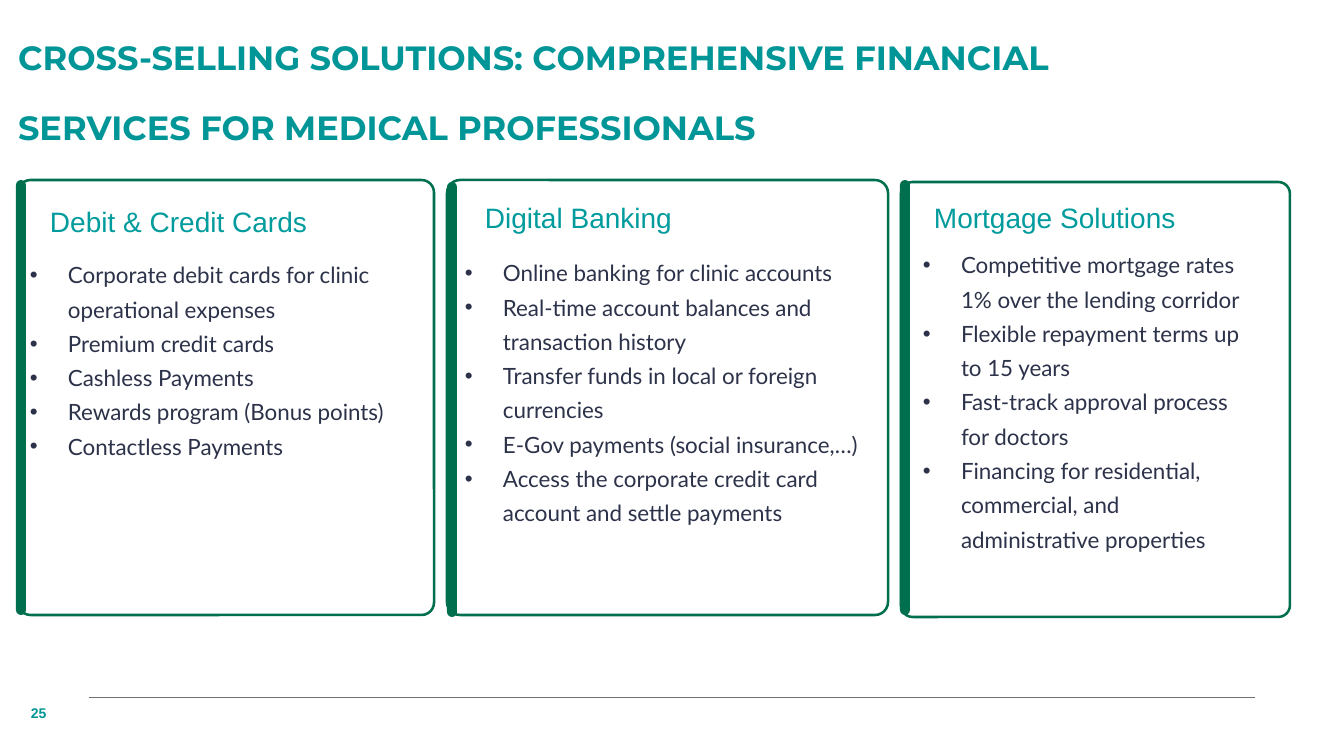
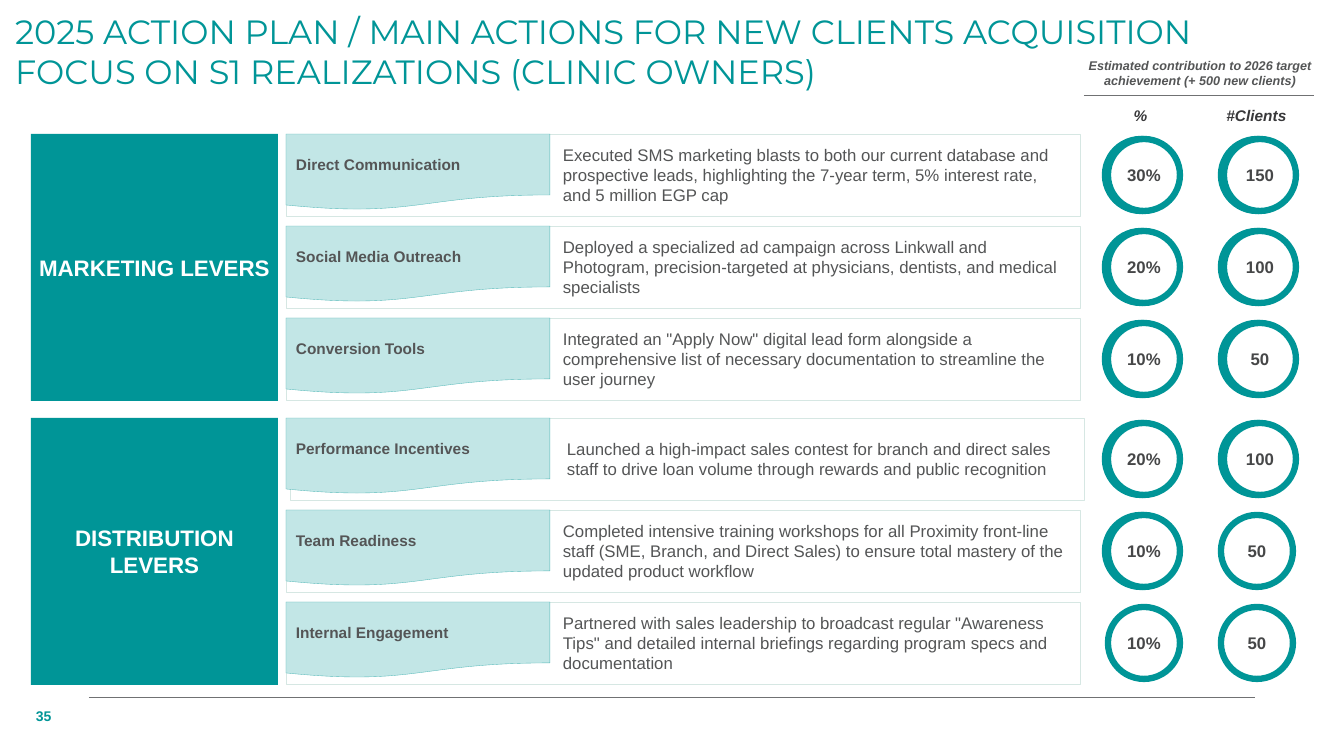
"""Build two slides: cross-selling solutions and the 2025 action plan."""
from lxml import etree
from pptx import Presentation
from pptx import util as u
from pptx.dml.color import RGBColor
from pptx.enum import shapes, text
from pptx.oxml.ns import qn

SCALE = 12192000 / 1344
COLORS = {
    "teal": "009597", "heading": "009B9D", "green": "006F4E", "navy": "2C3249",
    "white": "FFFFFF", "pale": "C2E6E6", "pale_edge": "58BABA", "card_edge": "D6E7E3",
    "rule": "707173", "body": "545556", "caption": "38383A", "figure": "464748",
}
SHAPE = shapes.MSO_SHAPE
MIDDLE = {"vertical_anchor": text.MSO_ANCHOR.MIDDLE}
TOP = {"vertical_anchor": text.MSO_ANCHOR.TOP}
SIDES = ("margin_left", "margin_top", "margin_right", "margin_bottom")
FLUSH = TOP | dict.fromkeys(SIDES, 0)
SNUG = MIDDLE | dict.fromkeys(SIDES, u.Inches(0.04))
LEFT = {"alignment": text.PP_ALIGN.LEFT}
CENTER = {"alignment": text.PP_ALIGN.CENTER}

STYLES = {
    "spaced_title": (FLUSH, LEFT | {"line_spacing": u.Pt(50.5)}, "teal",
                     {"name": "Montserrat", "size": u.Pt(24), "bold": True}),
    "title": (TOP, LEFT, "teal", {"name": "Montserrat", "size": u.Pt(24), "bold": False}),
    "page": (MIDDLE, LEFT, "teal", {"name": "Arial", "size": u.Pt(10), "bold": True}),
    "heading": (FLUSH, LEFT | {"line_spacing": u.Pt(25)}, "heading",
                {"name": "Arial", "size": u.Pt(20)}),
    "bullets": (FLUSH, LEFT | {"line_spacing": u.Pt(24.5)}, "navy",
                {"name": "Lato", "size": u.Pt(16)}),
    "lever": (SNUG, CENTER, "white", {"name": "Arial", "size": u.Pt(16), "bold": True}),
    "action": (MIDDLE, LEFT, "body", {"name": "Arial", "size": u.Pt(11), "bold": True}),
    "detail": (MIDDLE, LEFT, "body", {"name": "Arial", "size": u.Pt(12)}),
    "figure": (SNUG, CENTER, "figure", {"name": "Arial", "size": u.Pt(12), "bold": True}),
    "note": (FLUSH, CENTER, "body",
             {"name": "Arial", "size": u.Pt(9), "bold": True, "italic": True}),
    "caption": (MIDDLE, CENTER, "caption",
                {"name": "Arial", "size": u.Pt(11), "bold": True, "italic": True}),
}


def write(frame, style, *lines, indent=0):
    """Fill a text frame with paragraphs in one of the named styles."""
    frame_format, paragraph_format, color, font_format = STYLES[style]
    frame.word_wrap = True
    frame.auto_size = text.MSO_AUTO_SIZE.NONE
    for key, value in frame_format.items():
        setattr(frame, key, value)
    for number, line in enumerate(lines):
        paragraph = frame.add_paragraph() if number else frame.paragraphs[0]
        properties = paragraph._p.get_or_add_pPr()
        if indent:
            properties.set("marL", str(round(indent * SCALE)))
        if style == "bullets":
            properties.set("indent", str(round(-indent * SCALE)))
            etree.SubElement(properties, qn("a:buFont")).set("typeface", "Arial")
            etree.SubElement(properties, qn("a:buChar")).set("char", "•")
        for key, value in paragraph_format.items():
            setattr(paragraph, key, value)
        run = paragraph.add_run()
        run.text = line
        for key, value in font_format.items():
            setattr(run.font, key, value)
        run.font.color.rgb = RGBColor.from_string(COLORS[color])


def draw(slide, kind, box, fill=None, edge=None, width=0, rounding=None):
    """Add a shape, a text box or a straight rule; box is in px."""
    box = [round(length * SCALE) for length in box]
    if kind == "text":
        return slide.shapes.add_textbox(*box)
    if kind == "rule":
        part = slide.shapes.add_connector(shapes.MSO_CONNECTOR.STRAIGHT, *box)
    else:
        part = slide.shapes.add_shape(kind, *box)
        part.shadow.inherit = False
        part.fill.solid()
        part.fill.fore_color.rgb = RGBColor.from_string(COLORS[fill])
    if rounding is not None:
        part.adjustments[0] = rounding
    if edge:
        part.line.color.rgb = RGBColor.from_string(COLORS[edge])
        part.line.width = u.Pt(width)
    else:
        part.line.fill.background()
    if kind == "rule":
        etree.SubElement(part._element.spPr, qn("a:effectLst"))
    return part


deck = Presentation()
deck.slide_width, deck.slide_height = round(1344 * SCALE), round(756 * SCALE)

pages = [
    ("25", (21, 699, 59, 28), "spaced_title", (18, 6, 1181, 145),
     ["CROSS-SELLING SOLUTIONS: COMPREHENSIVE FINANCIAL SERVICES FOR MEDICAL PROFESSIONALS"]),
    ("35", (26, 702, 59, 28), "title", (5, 6, 1329, 92),
     ["2025 ACTION PLAN / MAIN ACTIONS FOR NEW CLIENTS ACQUISITION",
      "FOCUS ON S1 REALIZATIONS (CLINIC OWNERS)"]),
]
for page, page_box, title_style, title_box, title_lines in pages:
    slide = deck.slides.add_slide(deck.slide_layouts[5])
    title = slide.shapes.title
    for side, length in zip(("left", "top", "width", "height"), title_box):
        setattr(title, side, round(length * SCALE))
    write(title.text_frame, title_style, *title_lines)
    draw(slide, "rule", (89, 697, 1255, 697), edge="rule", width=0.5)
    write(draw(slide, "text", page_box).text_frame, "page", page)

solutions, plan = deck.slides

offers = [
    ("Debit & Credit Cards", (18, 180, 416, 435), (16, 180), (50, 203), (30, 254, 382, 279),
     ["Corporate debit cards for clinic operational expenses", "Premium credit cards",
      "Cashless Payments", "Rewards program (Bonus points)", "Contactless Payments"]),
    ("Digital Banking", (447, 180, 441, 435), (447, 182), (485, 199), (465, 252, 412, 325),
     ["Online banking for clinic accounts",
      "Real-time account balances and transaction history",
      "Transfer funds in local or foreign currencies",
      "E-Gov payments (social insurance,…)",
      "Access the corporate credit card account and settle payments"]),
    ("Mortgage Solutions", (901, 182, 389, 435), (900, 180), (934, 199), (923, 244, 338, 358),
     ["Competitive mortgage rates 1% over the lending corridor",
      "Flexible repayment terms up to 15 years",
      "Fast-track approval process for doctors",
      "Financing for residential, commercial, and administrative properties"]),
]
for heading, card, bar, heading_at, list_box, points in offers:
    draw(solutions, SHAPE.ROUNDED_RECTANGLE, card, "white", "green", 1.8, 0.03)
    draw(solutions, SHAPE.ROUNDED_RECTANGLE, (*bar, 10, 435), "green", rounding=0.5)
    write(draw(solutions, "text", (*heading_at, 300, 35)).text_frame, "heading", heading)
    write(draw(solutions, "text", list_box).text_frame, "bullets", *points, indent=38)

note = draw(plan, "text", (1083, 58, 234, 35))
write(note.text_frame, "note",
      "Estimated contribution to 2026 target achievement (+ 500 new clients)")
draw(plan, "rule", (1084, 95, 1314, 95), edge="rule", width=0.5)
for caption, left in (("%", 1088), ("#Clients", 1204)):
    write(draw(plan, "text", (left, 105, 105, 21)).text_frame, "caption", caption)

BOTH = (0, 3)
levers = [
    ("MARKETING LEVERS", 134, [
        ("Direct Communication", 286,
         "Executed SMS marketing blasts to both our current database and prospective leads, "
         "highlighting the 7-year term, 5% interest rate, and 5 million EGP cap",
         ("30%", BOTH), ("150", BOTH)),
        ("Social Media Outreach", 286,
         "Deployed a specialized ad campaign across Linkwall and Photogram, "
         "precision-targeted at physicians, dentists, and medical specialists",
         ("20%", BOTH), ("100", BOTH)),
        ("Conversion Tools", 286,
         'Integrated an "Apply Now" digital lead form alongside a comprehensive list of '
         "necessary documentation to streamline the user journey",
         ("10%", BOTH), ("50", BOTH)),
    ]),
    ("DISTRIBUTION LEVERS", 418, [
        ("Performance Incentives", 290,
         "Launched a high-impact sales contest for branch and direct sales staff to drive "
         "loan volume through rewards and public recognition",
         ("20%", BOTH), ("100", BOTH)),
        ("Team Readiness", 286,
         "Completed intensive training workshops for all Proximity front-line staff (SME, "
         "Branch, and Direct Sales) to ensure total mastery of the updated product workflow",
         ("10%", BOTH), ("50", (0,))),
        ("Internal Engagement", 286,
         'Partnered with sales leadership to broadcast regular "Awareness Tips" and detailed '
         "internal briefings regarding program specs and documentation",
         ("10%", (3,)), ("50", (0,))),
    ]),
]
for lever, lever_top, actions in levers:
    block = draw(plan, SHAPE.RECTANGLE, (31, lever_top, 247, 267), "teal")
    write(block.text_frame, "lever", lever)
    for row, (action, detail_left, detail, *figures) in enumerate(actions):
        top = lever_top + 92 * row
        card = draw(plan, SHAPE.ROUNDED_RECTANGLE, (detail_left, top, 794, 82),
                    "white", "card_edge", 0.5, 0)
        write(card.text_frame, "detail", detail, indent=267)
        tag = draw(plan, SHAPE.FLOWCHART_DOCUMENT, (286, top, 264, 76),
                   "pale", "pale_edge", 0.25)
        write(tag.text_frame, "action", action)
        for column, (figure, shifts) in enumerate(figures):
            for shift in shifts:
                ring = draw(plan, SHAPE.OVAL, (1105 + 116 * column + shift, top + 5, 72, 72),
                            "white", "teal", 4.5)
            write(ring.text_frame, "figure", figure)

deck.save("out.pptx")
